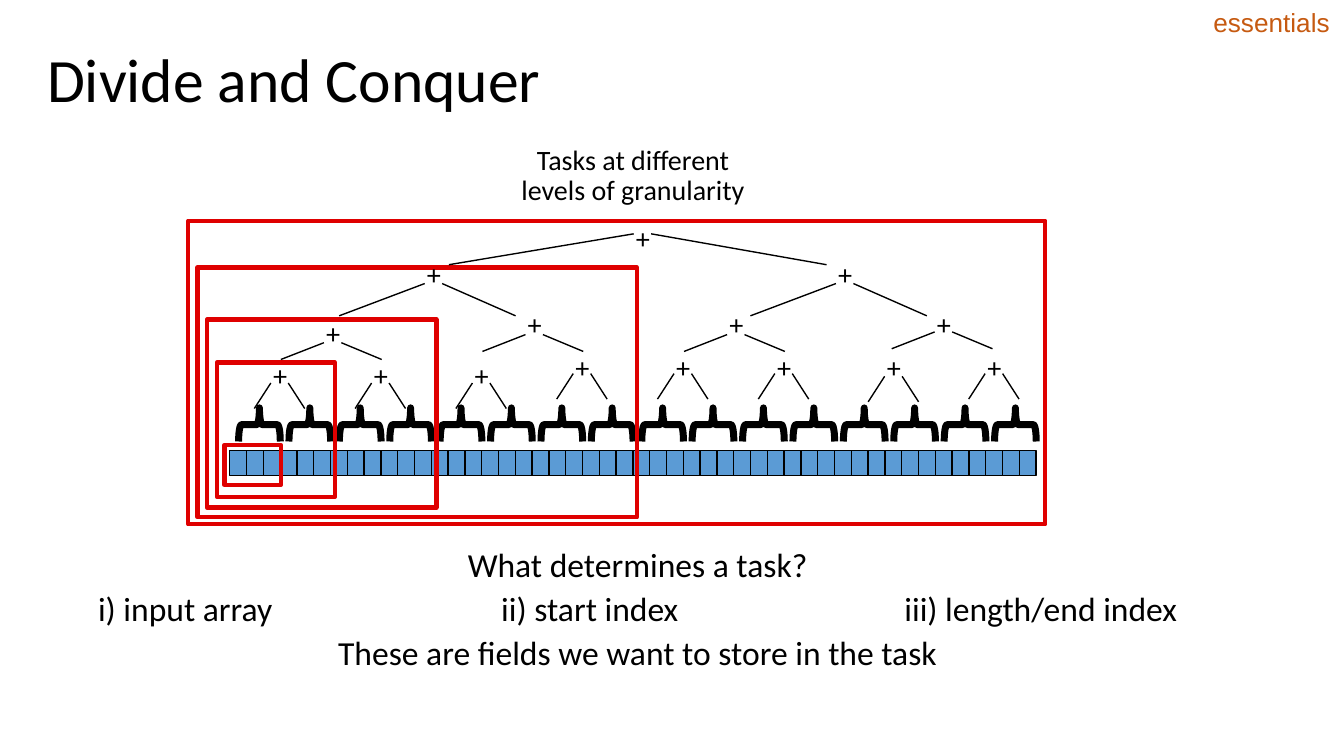
from pptx import Presentation
from pptx.dml.color import RGBColor
from pptx.enum.shapes import MSO_CONNECTOR, MSO_SHAPE
from pptx.enum.text import MSO_ANCHOR, MSO_AUTO_SIZE, PP_ALIGN
from pptx.oxml.ns import qn
from pptx.util import Inches, Pt
from lxml import etree

RECT, BRACE = MSO_SHAPE.RECTANGLE, MSO_SHAPE.LEFT_BRACE
STRAIGHT = MSO_CONNECTOR.STRAIGHT
TOP, MIDDLE = MSO_ANCHOR.TOP, MSO_ANCHOR.MIDDLE
LEFT, CENTER = PP_ALIGN.LEFT, PP_ALIGN.CENTER
NO_FIT = MSO_AUTO_SIZE.NONE
BLACK, RED, BLUE, ORANGE = "000000", "DF0000", "5B9BD5", "C65A11"

prs = Presentation()
prs.slide_width = Inches(10)
prs.slide_height = prs.slide_width * 9 // 16
slide = prs.slides.add_slide(prs.slide_layouts[5])
shapes = slide.shapes


def grid(*cells):
    """Lengths on a grid of 80 columns and 45 rows."""
    return [round(cell * prs.slide_width / 80) for cell in cells]


def write(box, lines, size, margins, anchor=TOP, wrap=True, font="Calibri",
          color=BLACK, **paragraph_format):
    frame = box.text_frame
    side, end = Inches(margins[0]), Inches(margins[1])
    frame_format = dict(auto_size=NO_FIT, word_wrap=wrap, vertical_anchor=anchor,
                        margin_left=side, margin_right=side,
                        margin_top=end, margin_bottom=end)
    for key, value in frame_format.items():
        setattr(frame, key, value)
    for number, line in enumerate(lines):
        paragraph = frame.add_paragraph() if number else frame.paragraphs[0]
        for key, value in paragraph_format.items():
            setattr(paragraph, key, value)
        run = paragraph.add_run()
        run.text = line
        for key, value in dict(name=font, size=Pt(size), bold=False).items():
            setattr(run.font, key, value)
        run.font.color.rgb = RGBColor.from_string(color)


# Title
title = shapes.title
for key, value in zip(("left", "top", "width", "height"), grid(2.24, 1.2, 75.52, 7.44)):
    setattr(title, key, value)
write(title, ["Divide and Conquer"], 33, (0.07, 0.04), MIDDLE,
      alignment=LEFT, line_spacing=0.9)

# Outlined shapes: array cells, braces over every three cells, nested task frames
array_cells = [(RECT, (13.68 + i, 26.8, 1, 1.52), 0, BLUE, BLACK, 0.75) for i in range(48)]
braces = [(BRACE, (14.44 + 3 * i, 24.04, 2, 2.48), 90, None, BLACK, 3.75) for i in range(16)]
task_frames = [(RECT, area, 0, None, RED, 2.25) for area in (
    (13.36, 26.48, 3.36, 2.4),
    (12.9, 21.58, 7.04, 8),
    (12.32, 19.02, 13.66, 11.2),
    (11.76, 15.92, 26.16, 14.88),
    (11.2, 13.14, 51.02, 18.08),
)]
for preset, area, rotation, fill, outline, weight in array_cells + braces + task_frames:
    part = shapes.add_shape(preset, *grid(*area))
    part.shadow.inherit = False
    part.rotation = rotation
    if fill:
        part.fill.solid()
        part.fill.fore_color.rgb = RGBColor.from_string(fill)
    else:
        part.fill.background()
    part.line.color.rgb = RGBColor.from_string(outline)
    part.line.width = Pt(weight)

# Tree levels: branch reach, drop and shift, then (column, apex row, label row) of the nodes
tree = [
    (11.24, 1.84, -0.28, [(38.24, 13.92, 13.12)]),
    (5.25, 1.92, -0.36, [(25.8, 16.88, 15.28), (50.28, 16.88, 15.28)]),
    (3, 1, -0.08, [(19.8, 20.4, 18.8), (31.8, 19.92, 18.24),
                   (43.8, 19.92, 18.24), (56.16, 19.76, 18.24)]),
    (1.5, 1.52, 0, [(16.64, 22.8, 21.28), (22.64, 22.8, 21.28), (28.64, 22.8, 21.28),
                    (34.64, 22.24, 20.8), (40.64, 22.24, 20.8), (46.64, 22.24, 20.8),
                    (53.18, 22.4, 20.8), (59.16, 22.24, 20.8)]),
]
for reach, drop, shift, nodes in tree:
    for column, apex, label_row in nodes:
        for side in (-1, 1):
            branch = shapes.add_connector(STRAIGHT, *grid(
                column + shift + side * reach, apex + drop, column + side * 0.52, apex))
            branch.line.color.rgb = RGBColor.from_string(BLACK)
            branch.line.width = Pt(0.75)
            etree.SubElement(branch._element.spPr, qn("a:effectLst"))
        plus = shapes.add_textbox(*grid(column - 1.08, label_row, 2.08, 2.64))
        plus.rotation = 180
        write(plus, ["+"], 15, (0.07, 0.04))

# Caption above the tree and questions below it
spaced = dict(alignment=CENTER, line_spacing=0.9, space_before=Pt(4))
caption = shapes.add_textbox(*grid(30.04, 8.32, 15.28, 4.4))
write(caption, ["Tasks at different levels of granularity"], 15, (0.1, 0.1), MIDDLE, **spaced)

questions = shapes.add_textbox(*grid(2.16, 31.86, 71.6, 4.4))
write(questions, [
    "What determines a task?",
    "i) input array\t\tii) start index \t\tiii) length/end index",
    "These are fields we want to store in the task",
], 18, (0.1, 0.1), **spaced)

# Tab stops one inch apart for the row of three fields
fields = questions.text_frame.paragraphs[1]
tab_stops = etree.SubElement(fields._p.get_or_add_pPr(), qn("a:tabLst"))
for stop in range(1, 7):
    etree.SubElement(tab_stops, qn("a:tab"), pos=str(Inches(stop)), algn="l")

# Corner tag
tag = shapes.add_textbox(*grid(71.44, 0, 8.56, 2.72))
write(tag, ["essentials"], 14, (0.1, 0.05), wrap=False, font="Arial", color=ORANGE)

prs.save("out.pptx")
